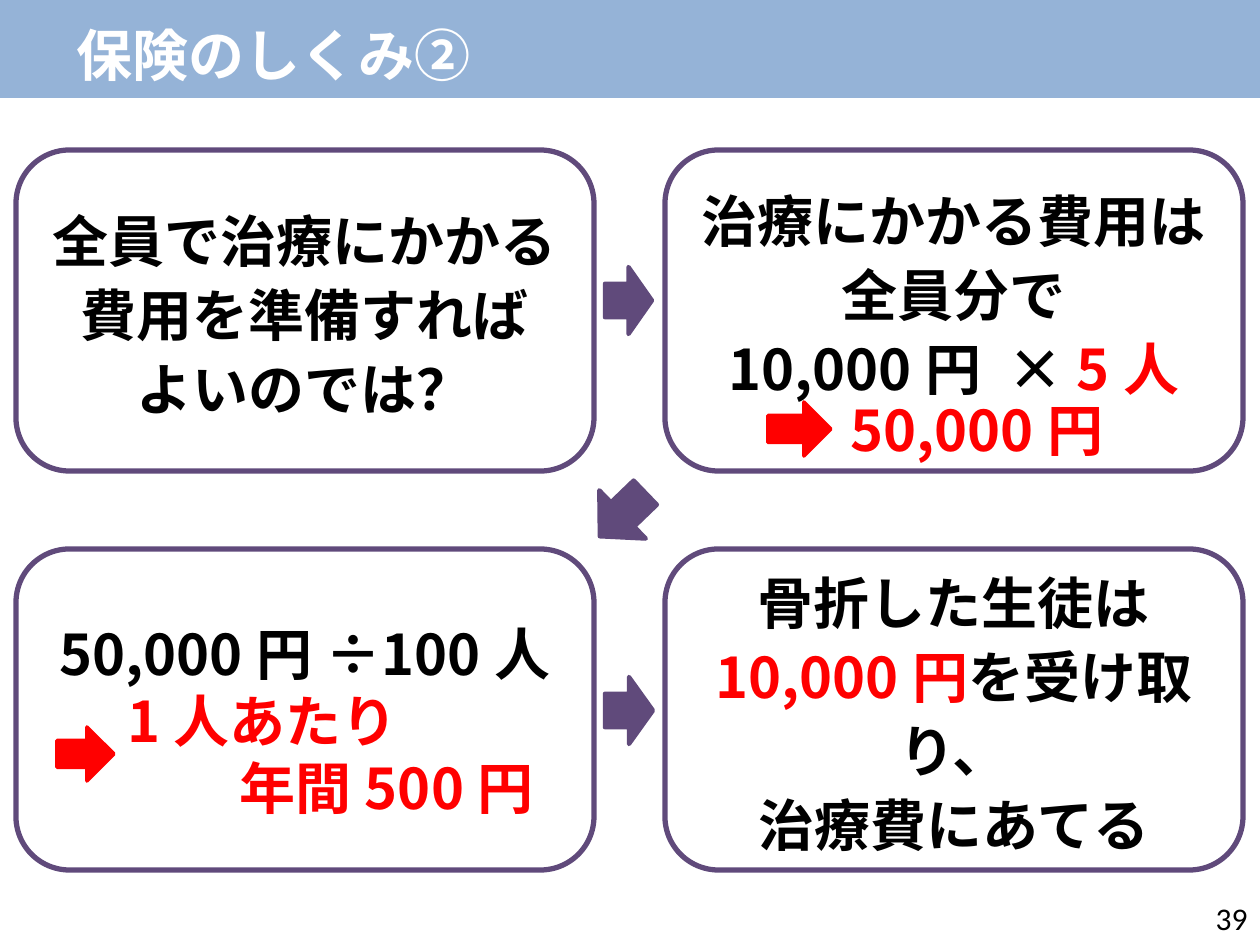
from lxml import etree
from pptx import Presentation
from pptx import util as u
from pptx.dml.color import RGBColor
from pptx.enum import shapes, text
from pptx.oxml.ns import qn

BLUE = RGBColor(0x95, 0xB3, 0xD7)
PURPLE = RGBColor(0x60, 0x4A, 0x7B)
RED = RGBColor(0xFF, 0, 0)
BLACK = RGBColor(0, 0, 0)
WHITE = RGBColor(0xFF, 0xFF, 0xFF)
FONT = "Noto Sans CJK JP"
KIND = shapes.MSO_SHAPE
LEFT, MID, RIGHT = text.PP_ALIGN.LEFT, text.PP_ALIGN.CENTER, text.PP_ALIGN.RIGHT
CARD_W, CARD_H = 578, 321


def px(n):
    return u.Emu(round(n * 914400 / 126))


def write(shape, lines, size=32, color=BLACK, font=FONT, bold=True, align=MID,
          gap=1.0, wrap=True, anchor=text.MSO_ANCHOR.MIDDLE, foot=0, indents=()):
    """Each line is a string or a list of (string, colour) runs."""
    frame = shape.text_frame
    frame.auto_size = text.MSO_AUTO_SIZE.NONE
    frame.word_wrap = wrap
    frame.vertical_anchor = anchor
    frame.margin_bottom = px(6 + foot)
    for i, line in enumerate(lines):
        para = frame.paragraphs[0] if i == 0 else frame.add_paragraph()
        para.alignment = align
        para.line_spacing = gap
        if i < len(indents):
            para._p.get_or_add_pPr().set("marL", str(px(indents[i])))
        for words, tint in [(line, color)] if isinstance(line, str) else line:
            run = para.add_run()
            run.text = words
            run.font.size = u.Pt(size)
            run.font.bold = bold
            run.font.name = font
            run.font.color.rgb = tint
            east = etree.SubElement(run._r.get_or_add_rPr(), qn("a:ea"))
            east.set("typeface", font)


def label(slide, box, lines, **style):
    shape = slide.shapes.add_textbox(*map(px, box))
    write(shape, lines, **style)


def draw(slide, kind, box, fill, line=None, width=2.0, turn=0):
    shape = slide.shapes.add_shape(kind, *map(px, box))
    shape.shadow.inherit = False
    shape.fill.solid()
    shape.fill.fore_color.rgb = fill
    if line is None:
        shape.line.fill.background()
    else:
        shape.line.color.rgb = line
        shape.line.width = u.Pt(width)
    shape.rotation = turn
    return shape


def header(slide, x, y, w, h):
    bar = draw(slide, KIND.RECTANGLE, (x, y, w, h), BLUE)
    title = slide.shapes.title
    bar._element.addnext(title._element)
    title.left, title.top, title.width, title.height = map(
        px, (x + 64, y + 4, 541, 100))
    write(title, ["保険のしくみ②"], color=WHITE, align=LEFT)


def card(slide, x, y, lines, **style):
    shape = draw(slide, KIND.ROUNDED_RECTANGLE, (x, y, CARD_W, CARD_H),
                 WHITE, PURPLE, 3)
    write(shape, lines, **style)


def ask(slide, x, y):
    card(slide, x, y, ["全員で治療にかかる", "費用を準備すれば", "よいのでは？"], gap=1.1)


def total(slide, x, y):
    card(slide, x, y, ["治療にかかる費用は", "全員分で",
                       [("10,000円 × ", BLACK), ("5人", RED)]], gap=1.1, foot=40)
    draw(slide, KIND.RIGHT_ARROW, (x + 103, y + 252, 63, 54), RED, RED)
    label(slide, (x + 166, y + 239, 292, 81), ["50,000円"], color=RED,
          wrap=False, anchor=text.MSO_ANCHOR.TOP)


def share(slide, x, y):
    card(slide, x, y, ["50,000円÷100人"], foot=112)
    draw(slide, KIND.RIGHT_ARROW, (x + 41, y + 178, 57, 54), RED, RED)
    label(slide, (x + 99, y + 131, 442, 149), ["1人あたり", "年間500円"],
          color=RED, align=LEFT, anchor=text.MSO_ANCHOR.TOP, indents=(0, 112))


def payout(slide, x, y):
    card(slide, x, y, ["骨折した生徒は", [("10,000円", RED), ("を受け取り、", BLACK)],
                       "治療費にあてる"], gap=1.1)


def flow(slide):
    # Arrows leading from one card to the next
    for x, y, w, turn in ((605, 267, 47, 0), (605, 677, 48, 0), (591, 481, 63, 136.1)):
        draw(slide, KIND.RIGHT_ARROW, (x, y, w, 67), PURPLE, PURPLE, 2.5, turn)


def main():
    deck = Presentation()
    deck.slide_width, deck.slide_height = px(1260), px(945)
    slide = deck.slides.add_slide(deck.slide_layouts[5])
    header(slide, 0, 0, 1260, 98)
    # Two by two cards
    near, far, top, low = 16, 665, 150, 549
    ask(slide, near, top)
    total(slide, far, top)
    share(slide, near, low)
    payout(slide, far, low)
    flow(slide)
    # Page number
    label(slide, (977, 893, 283, 50), ["39"], size=18, font="Calibri",
          bold=False, align=RIGHT)
    deck.save("out.pptx")


if __name__ == "__main__":
    main()
